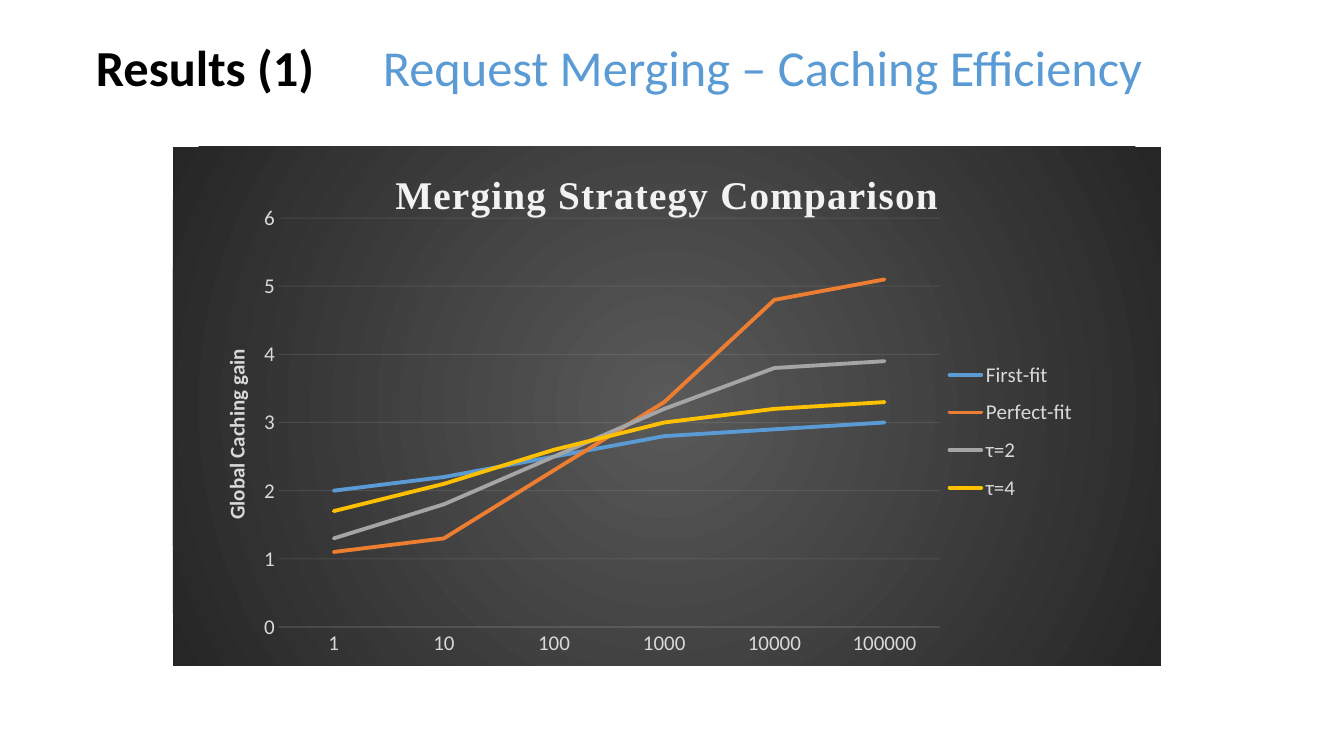
from dataclasses import dataclass
from typing import Any

from lxml.etree import SubElement
from pptx import Presentation
from pptx.chart.chart import Chart
from pptx.chart.data import CategoryChartData
from pptx.dml.color import RGBColor
from pptx.dml.line import LineFormat
from pptx.enum.chart import XL_CHART_TYPE, XL_LEGEND_POSITION, XL_TICK_MARK
from pptx.oxml import parse_xml
from pptx.oxml.ns import nsdecls, qn
from pptx.slide import Slide
from pptx.util import Emu, Pt

SCALE = 914400 / 100.8


@dataclass(frozen=True)
class Theme:
    font: str = "Calibri"
    serif: str = "Times New Roman"
    ink: str = "000000"
    blue: str = "5B9BD5"
    orange: str = "ED7D31"
    grey: str = "A5A5A5"
    gold: str = "FFC000"
    pale: str = "F2F2F2"
    label: str = "D9D9D9"
    core: str = "595959"
    rim: str = "262626"
    head: int = 36
    title: int = 28
    small: int = 15
    curve: float = 2.75
    hair: float = 0.75


@dataclass(frozen=True)
class Box:
    left: int
    top: int
    width: int
    height: int

    def emu(self) -> tuple[Emu, ...]:
        return tuple(px(n) for n in (self.left, self.top, self.width, self.height))


@dataclass(frozen=True)
class Series:
    name: str
    color: str
    values: tuple[float, ...]


THEME = Theme()
PAGE = Box(0, 0, 1344, 756)
HEAD = Box(86, 31, 1093, 72)
PANEL = Box(173, 147, 988, 519)
PLOT = Box(279, 218, 661, 409)
LEGEND = Box(944, 350, 134, 163)
YTITLE = Box(218, 345, 18, 172)
HEAD_TAB = 287

CATS = ("1", "10", "100", "1000", "10000", "100000")
SERIES = (
    Series("First-fit", THEME.blue, (2, 2.2, 2.5, 2.8, 2.9, 3)),
    Series("Perfect-fit", THEME.orange, (1.1, 1.3, 2.3, 3.3, 4.8, 5.1)),
    Series("τ=2", THEME.grey, (1.3, 1.8, 2.5, 3.2, 3.8, 3.9)),
    Series("τ=4", THEME.gold, (1.7, 2.1, 2.6, 3, 3.2, 3.3)),
)


def px(count: int) -> Emu:
    return Emu(round(count * SCALE))


def apply(item: Any, **values: Any) -> None:
    for name, value in values.items():
        setattr(item, name, value)


def style(font: Any, size: int, color: str, bold: bool = False, name: str = THEME.font) -> None:
    apply(font, size=Pt(size), bold=bold, name=name)
    font.color.rgb = RGBColor.from_string(color)


def stroke(line: LineFormat, color: str, width: float) -> None:
    line.width = Pt(width)
    line.color.rgb = RGBColor.from_string(color)


def faint(line: LineFormat) -> None:
    """Draw a hairline at ten percent opacity."""
    stroke(line, THEME.pale, THEME.hair)
    color = line.fill._xPr.find(".//" + qn("a:srgbClr"))
    SubElement(color, qn("a:alpha"), val="10000")


def place(node: Any, box: Box, sized: bool = True) -> None:
    """Fix a chart part at a page position, as shares of the panel."""
    for old in node.findall(qn("c:layout")):
        node.remove(old)
    layout = parse_xml(f"<c:layout {nsdecls('c')}><c:manualLayout/></c:layout>")
    shares = {
        "x": (box.left - PANEL.left) / PANEL.width,
        "y": (box.top - PANEL.top) / PANEL.height,
    }
    if sized:
        shares |= {"w": box.width / PANEL.width, "h": box.height / PANEL.height}
    values = {"layoutTarget": "inner"} if node.tag == qn("c:plotArea") else {}
    values |= {"xMode": "edge", "yMode": "edge"}
    values |= {key: f"{share:.3f}" for key, share in shares.items()}
    for key, value in values.items():
        SubElement(layout[0], qn(f"c:{key}"), val=value)
    lead = [n for n in node if n.tag in (qn("c:tx"), qn("c:legendPos"))]
    node.insert(node.index(lead[-1]) + 1 if lead else 0, layout)


def shade(chart: Chart) -> None:
    """Fill the panel with a radial gradient."""
    stops = "".join(
        f'<a:gs pos="{pos}"><a:srgbClr val="{color}"/></a:gs>'
        for pos, color in ((0, THEME.core), (100000, THEME.rim))
    )
    fill = parse_xml(
        f"<c:spPr {nsdecls('c', 'a')}><a:gradFill><a:gsLst>{stops}</a:gsLst>"
        '<a:path path="circle"><a:fillToRect l="50000" t="50000" r="50000" b="50000"/>'
        "</a:path></a:gradFill><a:ln><a:noFill/></a:ln></c:spPr>"
    )
    chart._chartSpace.find(qn("c:chart")).addnext(fill)


def add_head(slide: Slide) -> None:
    frame = slide.shapes.add_textbox(*HEAD.emu()).text_frame
    frame.word_wrap = True
    line = frame.paragraphs[0]
    tabs = SubElement(line._p.get_or_add_pPr(), qn("a:tabLst"))
    SubElement(tabs, qn("a:tab"), pos=str(px(HEAD_TAB)), algn="l")
    parts = (
        ("Results (1)\t", THEME.ink, True),
        ("Request Merging – Caching Efficiency", THEME.blue, False),
    )
    for text, color, bold in parts:
        run = line.add_run()
        run.text = text
        style(run.font, THEME.head, color, bold)


def add_title(owner: Any, text: str, **look: Any) -> Any:
    """Title a chart or an axis and return its run."""
    owner.has_title = True
    title = owner.chart_title if isinstance(owner, Chart) else owner.axis_title
    run = title.text_frame.paragraphs[0].add_run()
    run.text = text
    style(run.font, bold=True, **look)
    return run


def add_graph(slide: Slide) -> None:
    data = CategoryChartData()
    data.categories = CATS
    for item in SERIES:
        data.add_series(item.name, item.values)
    chart = slide.shapes.add_chart(XL_CHART_TYPE.LINE, *PANEL.emu(), data).chart
    style(chart.font, THEME.small, THEME.label)
    shade(chart)
    run = add_title(chart, "Merging Strategy Comparison",
                    size=THEME.title, color=THEME.pale, name=THEME.serif)
    run.font._element.set("spc", "100")

    plot = chart.plots[0]
    plot.vary_by_categories = False
    for line, item in zip(plot.series, SERIES):
        line.smooth = False
        stroke(line.format.line, item.color, THEME.curve)
        line.format.line.fill._xPr.set("cap", "rnd")
    place(chart._chartSpace.find(".//" + qn("c:plotArea")), PLOT)

    across, up = chart.category_axis, chart.value_axis
    for axis in (across, up):
        apply(axis, major_tick_mark=XL_TICK_MARK.NONE, minor_tick_mark=XL_TICK_MARK.NONE)
        style(axis.tick_labels.font, THEME.small, THEME.label)
    faint(across.format.line)
    apply(up, minimum_scale=0, maximum_scale=6, major_unit=1, has_major_gridlines=True)
    up.format.line.fill.background()
    faint(up.major_gridlines.format.line)
    add_title(up, "Global Caching gain", size=THEME.small, color=THEME.label)
    place(up.axis_title._element, YTITLE, sized=False)

    chart.has_legend = True
    apply(chart.legend, position=XL_LEGEND_POSITION.RIGHT, include_in_layout=False)
    style(chart.legend.font, THEME.small, THEME.label)
    place(chart.legend._element, LEGEND)


def main() -> None:
    deck = Presentation()
    apply(deck, slide_width=px(PAGE.width), slide_height=px(PAGE.height))
    slide = deck.slides.add_slide(deck.slide_layouts[6])
    add_graph(slide)
    add_head(slide)
    deck.save("out.pptx")


if __name__ == "__main__":
    main()
